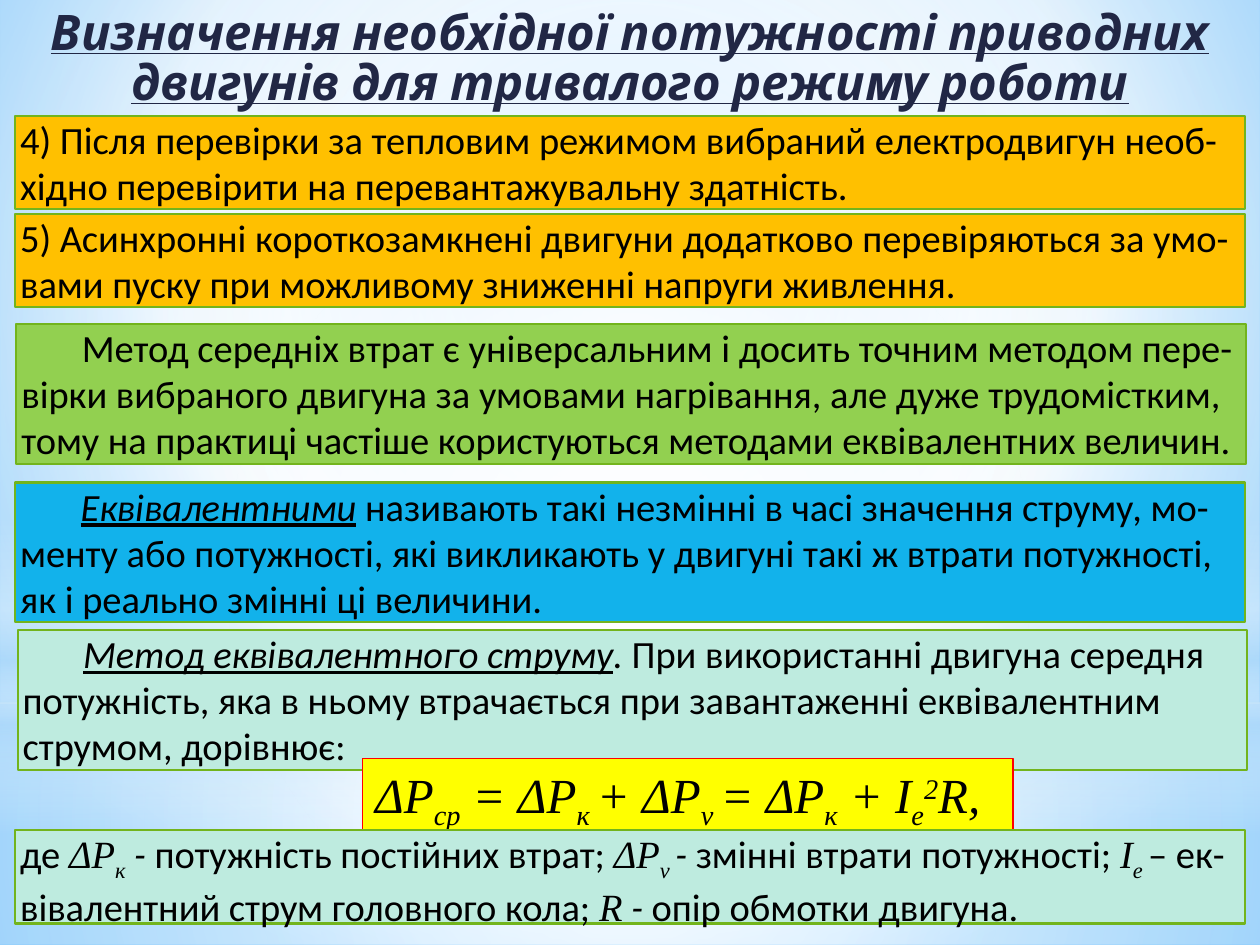
from lxml.etree import SubElement
from pptx import Presentation
from pptx.dml.color import RGBColor
from pptx.enum.shapes import MSO_SHAPE
from pptx.enum.text import MSO_ANCHOR, MSO_AUTO_SIZE, PP_ALIGN
from pptx.oxml import parse_xml
from pptx.oxml.ns import nsdecls, qn
from pptx.util import Inches, Pt

TITLE = "Визначення необхідної потужності приводних двигунів для тривалого режиму роботи"
MID = (50, 50, 50, 50)
BACK = ([(0, "9ED5FF", 100), (60, "FFFFFF", 100), (100, "5BB9FF", 100)], (20, 10, 20, 60))
LAYERS = [
    (0, 5.58, 1.92, MSO_SHAPE.RECTANGLE, MID,
     [(0, "FFFFFF", 91), (37, "FFFFFF", 76), (100, "B4DCFA", 79)]),
    (0, 0, 5.58, MSO_SHAPE.RECTANGLE, MID,
     [(0, "FFFFFF", 89), (48, "FFFFFF", 62), (100, "B4DCFA", 79)]),
    (0, 4.12, 2.5, MSO_SHAPE.RECTANGLE, None,
     [(0, "FFFFFF", 0), (29, "FFFFFF", 30), (45, "B4DCFA", 40),
      (55, "FFFFFF", 26), (65, "B4DCFA", 60), (100, "FFFFFF", 0)]),
    (0, 1.75, 5.58, MSO_SHAPE.OVAL, MID, [(0, "FFFFFF", 100), (56, "FFFFFF", 0)]),
]
WIDE, ROW, PAD = 9.76, 0.37, 0.04
BODY, HEAD = 22, 28
STYLES = {
    "plain": ("Calibri", False, False, 0),
    "slant": ("Calibri", True, False, 0),
    "term": ("Calibri", True, True, 0),
    "math": ("Times New Roman", True, False, 0),
    "sub": ("Times New Roman", True, False, -25),
    "sup": ("Times New Roman", True, False, 30),
}
BOXES = [
    (0.13, 2.57, 3, "92D050", 0.48, [
        ("plain", "Метод середніх втрат є універсальним і досить точним методом пере-вірки вибраного двигуна за умовами нагрівання, але дуже трудомістким, тому на практиці частіше користуються методами еквівалентних величин.")]),
    (0.12, 3.83, 3, "12B2EB", 0.48, [
        ("term", "Еквівалентними"),
        ("plain", " називають такі незмінні в часі значення струму, мо-менту або потужності, які викликають у двигуні такі ж втрати потужності, як і реально змінні ці величини.")]),
    (0.12, 0.92, 2, "FFC000", 0, [
        ("plain", "4) Після перевірки за тепловим режимом вибраний електродвигун необ-хідно перевірити на перевантажувальну здатність.")]),
    (0.12, 1.7, 2, "FFC000", 0, [
        ("plain", "5) Асинхронні короткозамкнені двигуни додатково перевіряються за умо-вами пуску при можливому зниженні напруги живлення.")]),
    (0.14, 5, 3, "BEEBDF", 0.48, [
        ("term", "Метод еквівалентного струму"), ("slant", "."),
        ("plain", " При використанні двигуна середня потужність, яка в ньому втрачається при завантаженні еквівалентним струмом, дорівнює:")]),
]
SUM = [("math", "ΔР"), ("sub", "ср"), ("math", " = ΔР"), ("sub", "к "), ("math", "+ ΔР"),
       ("sub", "v "), ("math", "= ΔР"), ("sub", "к"), ("math", " + І"), ("sub", "e"),
       ("sup", "2"), ("math", "R,")]
KEY = (0.12, 6.59, 2, "BEEBDF", 0, [
    ("plain", "де "), ("math", "ΔР"), ("sub", "к"), ("slant", " -"),
    ("plain", " потужність постійних втрат; "), ("math", "ΔР"), ("sub", "v "), ("slant", "-"),
    ("plain", " змінні втрати потужності; "), ("math", "І"), ("sub", "е "),
    ("plain", "– ек-вівалентний струм головного кола; "), ("math", "R"), ("slant", " -"),
    ("plain", " опір обмотки двигуна.")])


def tint(code):
    return RGBColor.from_string(code)


def blend(stops, rect):
    grad = parse_xml(f'<a:gradFill {nsdecls("a")} rotWithShape="1"><a:gsLst/></a:gradFill>')
    for pos, code, alpha in stops:
        stop = SubElement(grad[0], qn("a:gs"), pos=str(pos * 1000))
        color = SubElement(stop, qn("a:srgbClr"), val=code)
        if alpha < 100:
            SubElement(color, qn("a:alpha"), val=str(alpha * 1000))
    if rect:
        way = SubElement(grad, qn("a:path"), {"path": "circle"})
        SubElement(way, qn("a:fillToRect"), {k: str(v * 1000) for k, v in zip("ltrb", rect)})
    else:
        SubElement(grad, qn("a:lin"), ang=str(90 * 60000), scaled="0")
    return grad


def set_back(slide):
    base = parse_xml(f'<p:bg {nsdecls("p", "a")}><p:bgPr><a:effectLst/></p:bgPr></p:bg>')
    base[0].insert(0, blend(*BACK))
    slide.shapes._spTree.addprevious(base)


def add_shape(slide, kind, *rect):
    shape = slide.shapes.add_shape(kind, *map(Inches, rect))
    shape.shadow.inherit = False
    return shape


def add_layer(slide, left, top, high, kind, rect, stops):
    shape = add_shape(slide, kind, left, top, 10, high)
    shape.line.fill.background()
    shape._element.spPr.find(qn("a:prstGeom")).addnext(blend(stops, rect))


def set_frame(frame, side, edge):
    frame.word_wrap = True
    frame.auto_size = MSO_AUTO_SIZE.NONE
    frame.vertical_anchor = MSO_ANCHOR.TOP
    frame.margin_left = frame.margin_right = Inches(side)
    frame.margin_top = frame.margin_bottom = Inches(edge)


def set_title(slide):
    title = slide.shapes.title
    title.left, title.top, title.width, title.height = map(Inches, (0.12, 0.08, WIDE, 0.8))
    title.text_frame.text = TITLE
    set_frame(title.text_frame, 0, 0)
    par = title.text_frame.paragraphs[0]
    par.alignment, par.line_spacing = PP_ALIGN.CENTER, 0.85
    font = par.runs[0].font
    font.name, font.size, font.color.rgb = "Karla", Pt(HEAD), tint("212745")
    font.bold = font.italic = font.underline = True
    slide.shapes._spTree.append(title._element)


def add_box(slide, rect, fill, line, width, size, inset, indent, runs):
    shape = add_shape(slide, MSO_SHAPE.RECTANGLE, *rect)
    shape.fill.solid()
    shape.fill.fore_color.rgb = tint(fill)
    shape.line.color.rgb, shape.line.width = tint(line), Pt(width)
    set_frame(shape.text_frame, *inset)
    par = shape.text_frame.paragraphs[0]
    par.alignment = PP_ALIGN.LEFT
    par._p.get_or_add_pPr().set("indent", str(Inches(indent)))
    for style, text in runs:
        run = par.add_run()
        run.text = text
        font = run.font
        font.name, font.italic, font.underline, shift = STYLES[style]
        font.size, font.color.rgb = Pt(size), tint("000000")
        if shift:
            run._r.get_or_add_rPr().set("baseline", str(shift * 1000))


def add_note(slide, left, top, rows, fill, indent, runs):
    add_box(slide, (left, top, WIDE, rows * ROW), fill, "72B41D", 1.25, BODY,
            (PAD, 0), indent, runs)


def main():
    """Build the slide on choosing motor power for continuous duty."""
    deck = Presentation()
    deck.slide_width, deck.slide_height = Inches(10), Inches(7.5)
    slide = deck.slides.add_slide(deck.slide_layouts[5])
    set_back(slide)
    for layer in LAYERS:
        add_layer(slide, *layer)
    set_title(slide)
    for box in BOXES:
        add_note(slide, *box)
    add_box(slide, (2.88, 6.02, 5.16, 0.57), "FFFF00", "FF0000", 0.75, HEAD,
            (0.1, 0.05), 0, SUM)
    add_note(slide, *KEY)
    deck.save("out.pptx")


if __name__ == "__main__":
    main()
